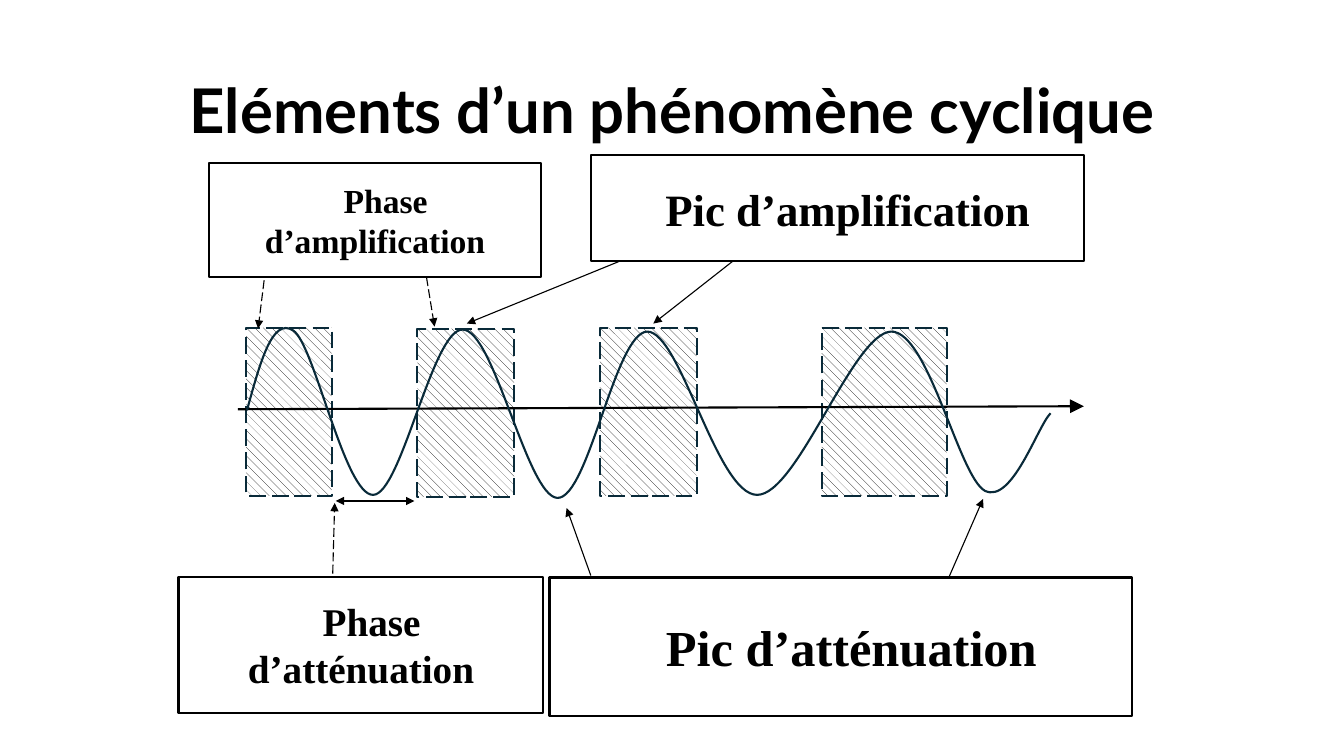
from dataclasses import dataclass

from lxml import etree
from pptx import Presentation
from pptx.dml.color import RGBColor
from pptx.enum.dml import MSO_LINE, MSO_PATTERN
from pptx.enum.shapes import MSO_CONNECTOR, MSO_SHAPE
from pptx.enum.text import MSO_ANCHOR, PP_ALIGN
from pptx.oxml.ns import qn
from pptx.util import Inches, Pt


@dataclass(frozen=True)
class Theme:
    ink: RGBColor = RGBColor(0x00, 0x00, 0x00)
    paper: RGBColor = RGBColor(0xFF, 0xFF, 0xFF)
    wave: RGBColor = RGBColor(0x09, 0x2A, 0x39)
    title_font: str = "Lato"
    label_font: str = "Times New Roman"
    title_size: int = 44
    phase_up_size: int = 24
    phase_down_size: int = 28
    peak_up_size: int = 32
    peak_down_size: int = 36
    thick: float = 1.5
    thin: float = 0.79


THEME = Theme()

WAVE_START = (2.45, 4.07)
WAVE_CURVES = [
    ((2.58, 3.6), (2.7, 3.14), (2.91, 3.28)),
    ((3.12, 3.42), (3.42, 4.91), (3.7, 4.91)),
    ((3.98, 4.91), (4.29, 3.26), (4.59, 3.27)),
    ((4.9, 3.27), (5.23, 4.93), (5.53, 4.94)),
    ((5.84, 4.94), (6.1, 3.3), (6.42, 3.29)),
    ((6.75, 3.29), (7.11, 4.91), (7.51, 4.91)),
    ((7.91, 4.91), (8.46, 3.3), (8.84, 3.29)),
    ((9.21, 3.29), (9.51, 4.73), (9.77, 4.87)),
    ((10.04, 5.0), (10.29, 4.23), (10.42, 4.1)),
]


def add_text(tf, text, font, size):
    p = tf.paragraphs[0]
    p.alignment = PP_ALIGN.CENTER
    r = p.add_run()
    r.text = text
    r.font.name = font
    r.font.size = Pt(size)
    r.font.bold = True
    r.font.color.rgb = THEME.ink
    return p


def style_line(line, color, width, dashed=False):
    line.color.rgb = color
    line.width = Pt(width)
    if dashed:
        line.dash_style = MSO_LINE.LONG_DASH


def set_title(s, text):
    sp = s.shapes.title
    sp.left, sp.top = Inches(0.92), Inches(0.4)
    sp.width, sp.height = Inches(11.5), Inches(1.45)
    sp.text_frame.vertical_anchor = MSO_ANCHOR.MIDDLE
    p = add_text(sp.text_frame, text, THEME.title_font, THEME.title_size)
    p.line_spacing = 0.9


def add_rect(s, box):
    sp = s.shapes.add_shape(MSO_SHAPE.RECTANGLE, *map(Inches, box))
    sp.shadow.inherit = False
    return sp


def add_label(s, box, text, size):
    sp = add_rect(s, box)
    sp.fill.background()
    style_line(sp.line, THEME.ink, THEME.thick)
    tf = sp.text_frame
    tf.word_wrap = True
    tf.vertical_anchor = MSO_ANCHOR.MIDDLE
    p = add_text(tf, text, THEME.label_font, size)
    p.space_after = Pt(6)
    p._p.get_or_add_pPr().set("indent", str(Inches(0.21)))


def add_hatched_phase(s, left, top, width):
    sp = add_rect(s, (left, top, width, 1.67))
    sp.fill.patterned()
    sp.fill.pattern = MSO_PATTERN.DASHED_DOWNWARD_DIAGONAL
    sp.fill.fore_color.rgb = THEME.ink
    sp.fill.back_color.rgb = THEME.paper
    style_line(sp.line, THEME.wave, THEME.thick, dashed=True)


def add_arrow(s, start, end, width=THEME.thin, dashed=False, both=False, head="med"):
    line = s.shapes.add_connector(
        MSO_CONNECTOR.STRAIGHT, *map(Inches, (*start, *end)))
    style_line(line.line, THEME.ink, width, dashed)
    ln = line.line._get_or_add_ln()
    for tag in ("a:headEnd", "a:tailEnd") if both else ("a:tailEnd",):
        etree.SubElement(ln, qn(tag), type="triangle", w=head, len=head)
    etree.SubElement(line._element.spPr, qn("a:effectLst"))


def add_wave(s):
    fb = s.shapes.build_freeform(*map(Inches, WAVE_START))
    ends = [tuple(map(Inches, curve[-1])) for curve in WAVE_CURVES]
    fb.add_line_segments(ends, close=False)
    sp = fb.convert_to_shape()
    sp.shadow.inherit = False
    sp.fill.background()
    style_line(sp.line, THEME.wave, THEME.thick)
    segments = list(sp._element.iter(qn("a:lnTo")))
    for segment, curve in zip(segments, WAVE_CURVES):
        bezier = etree.Element(qn("a:cubicBezTo"))
        for x, y in curve:
            etree.SubElement(bezier, qn("a:pt"), x=str(Inches(x) - sp.left),
                             y=str(Inches(y) - sp.top))
        segment.getparent().replace(segment, bezier)


def main():
    prs = Presentation()
    prs.slide_width, prs.slide_height = Inches(13.33), Inches(7.5)
    s = prs.slides.add_slide(prs.slide_layouts[5])
    set_title(s, "Eléments d’un phénomène cyclique")

    for left, top, width in [(8.15, 3.25, 1.24), (5.95, 3.25, 0.96),
                             (4.14, 3.26, 0.96), (2.44, 3.25, 0.85)]:
        add_hatched_phase(s, left, top, width)
    add_arrow(s, (2.36, 4.06), (10.75, 4.03), THEME.thick, head="lg")
    add_wave(s)
    add_arrow(s, (3.33, 4.97), (4.11, 4.97), THEME.thick, both=True)

    for box, text, size in [
        ((2.07, 1.62, 3.3, 1.13), "Phase d’amplification", THEME.phase_up_size),
        ((5.86, 1.54, 4.89, 1.05), "Pic d’amplification", THEME.peak_up_size),
        ((1.77, 5.72, 3.62, 1.35), "Phase d’atténuation", THEME.phase_down_size),
        ((5.45, 5.73, 5.78, 1.37), "Pic d’atténuation", THEME.peak_down_size),
    ]:
        add_label(s, box, text, size)

    for start, end in [((2.62, 2.78), (2.56, 3.26)),
                       ((4.23, 2.75), (4.31, 3.24)),
                       ((3.3, 5.69), (3.32, 4.99))]:
        add_arrow(s, start, end, dashed=True)
    for start, end in [((6.15, 2.59), (4.63, 3.21)),
                       ((7.27, 2.59), (6.48, 3.21)),
                       ((5.86, 5.71), (5.62, 5.04)),
                       ((9.41, 5.73), (9.75, 4.95))]:
        add_arrow(s, start, end)

    prs.save("out.pptx")


if __name__ == "__main__":
    main()
